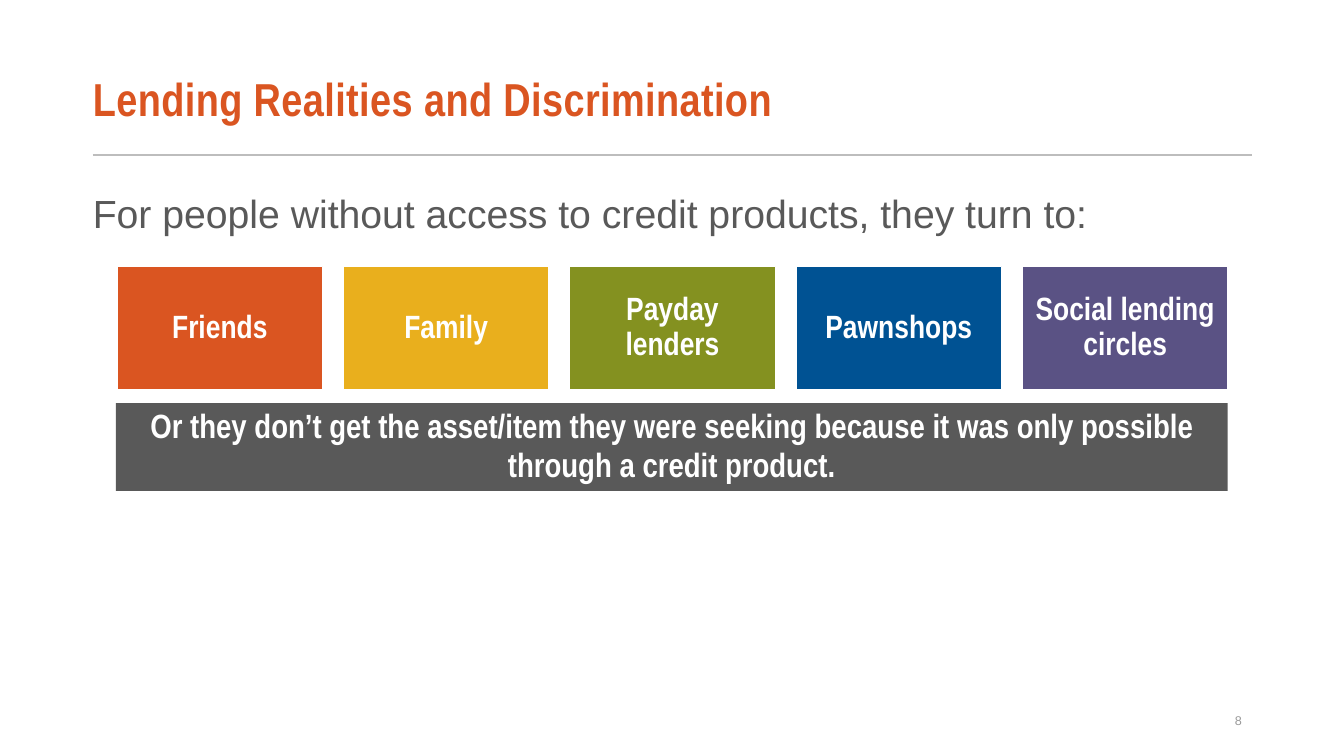
from lxml import etree
from pptx import Presentation
from pptx.dml.color import RGBColor
from pptx.enum.shapes import MSO_CONNECTOR, MSO_SHAPE
from pptx.enum.text import MSO_ANCHOR, PP_ALIGN
from pptx.oxml.ns import qn
from pptx.util import Cm, Pt

RECTANGLE = MSO_SHAPE.RECTANGLE
STRAIGHT = MSO_CONNECTOR.STRAIGHT
TOP, MIDDLE = MSO_ANCHOR.TOP, MSO_ANCHOR.MIDDLE
LEFT, CENTER, RIGHT = PP_ALIGN.LEFT, PP_ALIGN.CENTER, PP_ALIGN.RIGHT

ORANGE = RGBColor(0xDA, 0x55, 0x21)
YELLOW = RGBColor(0xE9, 0xAF, 0x1D)
GREEN = RGBColor(0x84, 0x91, 0x20)
BLUE = RGBColor(0x00, 0x52, 0x93)
PURPLE = RGBColor(0x5A, 0x52, 0x84)
DARK_GRAY = RGBColor(0x59, 0x59, 0x59)
RULE_GRAY = RGBColor(0xBD, 0xBD, 0xBD)
NUMBER_GRAY = RGBColor(0x9A, 0x9A, 0x9A)
WHITE = RGBColor(0xFF, 0xFF, 0xFF)

NARROW = {"name": "Arial Narrow", "bold": True}
TITLE_FONT = {**NARROW, "size": Pt(33)}
TILE_FONT = {**NARROW, "size": Pt(23)}
BANNER_FONT = {**NARROW, "size": Pt(24)}
LEAD_FONT = {"name": "Arial", "size": Pt(28)}
NUMBER_FONT = {"name": "Arial", "size": Pt(9)}

SIDE, INNER = 0.25, 0.13
TILE_GAP = 0.52
LENDING_SOURCES = [
    ("Friends", ORANGE),
    ("Family", YELLOW),
    ("Payday lenders", GREEN),
    ("Pawnshops", BLUE),
    ("Social lending circles", PURPLE),
]


def write_text(shape, text, font, color, align=LEFT, anchor=TOP, spacing=1.0,
               insets=(SIDE, INNER, SIDE, INNER)):
    """Fill a shape with one formatted paragraph and return its span."""
    frame = shape.text_frame
    frame.word_wrap = True
    frame.vertical_anchor = anchor
    for side, inset in zip(("left", "top", "right", "bottom"), insets):
        setattr(frame, f"margin_{side}", Cm(inset))
    para = frame.paragraphs[0]
    para.alignment = align
    para.line_spacing = spacing
    span = para.add_run()
    span.text = text
    for name, value in font.items():
        setattr(span.font, name, value)
    span.font.color.rgb = color
    return span


def add_text_box(page, box, *args, **layout):
    shape = page.shapes.add_textbox(*map(Cm, box))
    return write_text(shape, *args, **layout)


def add_panel(page, box, fill, line=None):
    panel = page.shapes.add_shape(RECTANGLE, *map(Cm, box))
    panel.shadow.inherit = False
    panel.fill.solid()
    panel.fill.fore_color.rgb = fill
    if line is None:
        panel.line.fill.background()
    else:
        panel.line.color.rgb = line
        panel.line.width = Pt(1)
    return panel


def add_heading(page, box):
    """Place the title, the rule under it and the lead sentence."""
    left, top, width, height = box
    insets = (0, INNER, SIDE, INNER)
    title = add_text_box(page, (left, top, width, 2.41),
                         "Lending Realities and Discrimination", TITLE_FONT, ORANGE,
                         anchor=MIDDLE, spacing=0.87, insets=insets)
    title.font._element.set("spc", "30")

    rule_top = top + 2.54
    rule = page.shapes.add_connector(STRAIGHT, Cm(left), Cm(rule_top),
                                     Cm(left + width), Cm(rule_top))
    rule.line.color.rgb = RULE_GRAY
    rule.line.width = Pt(1.5)
    etree.SubElement(rule._element.spPr, qn("a:effectLst"))

    add_text_box(page, (left, top + height - 1.78, width, 1.78),
                 "For people without access to credit products, they turn to:",
                 LEAD_FONT, DARK_GRAY, spacing=1.05, insets=insets)


def add_tiles(page, box):
    """Spread one tile per lending source evenly across the box."""
    left, top, width, height = box
    count = len(LENDING_SOURCES)
    tile_width = (width - TILE_GAP * (count - 1)) / count
    for index, (label, color) in enumerate(LENDING_SOURCES):
        tile_left = left + index * (tile_width + TILE_GAP)
        tile = add_panel(page, (tile_left, top, tile_width, height), color, WHITE)
        write_text(tile, label, TILE_FONT, WHITE, align=CENTER, anchor=MIDDLE,
                   spacing=0.9, insets=(SIDE,) * 4)


def add_banner(page, box):
    banner = add_panel(page, box, DARK_GRAY)
    write_text(banner, "Or they don’t get the asset/item they were seeking because "
               "it was only possible through a credit product.",
               BANNER_FONT, WHITE, align=CENTER, spacing=0.95)


def add_page_number(page, box):
    add_text_box(page, box, "8", NUMBER_FONT, NUMBER_GRAY, align=RIGHT, anchor=MIDDLE)


def main():
    deck = Presentation()
    deck.slide_width, deck.slide_height = Cm(33.87), Cm(19.05)
    page = deck.slides.add_slide(deck.slide_layouts[6])
    add_heading(page, (2.34, 1.37, 29.21, 4.98))
    add_tiles(page, (2.95, 6.71, 28, 3.1))
    add_banner(page, (2.92, 10.16, 28.02, 2.21))
    add_page_number(page, (23.93, 17.65, 7.62, 1.02))
    deck.save("out.pptx")


if __name__ == "__main__":
    main()
